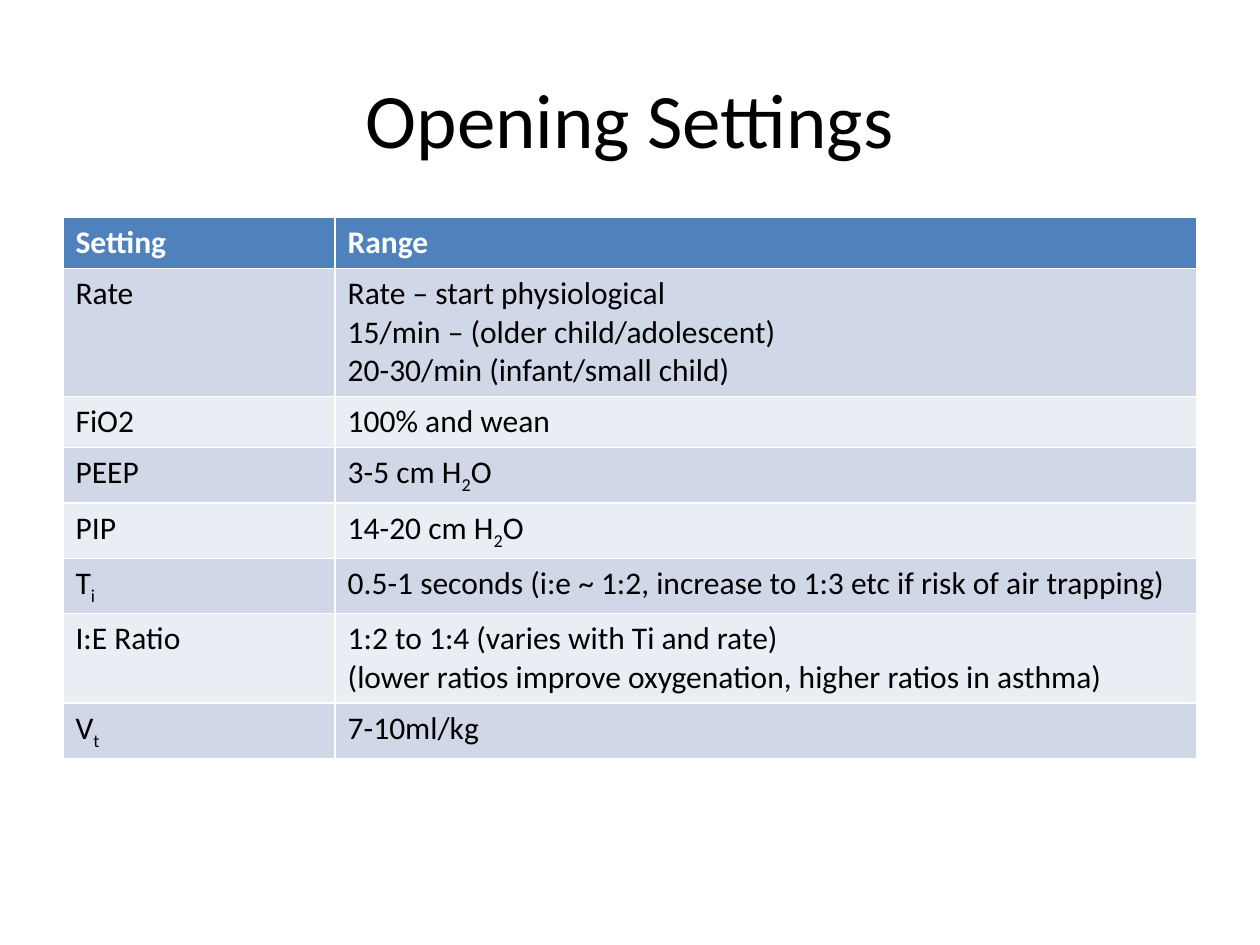
from pptx import Presentation
from pptx.dml.color import RGBColor
from pptx.enum.text import MSO_ANCHOR, PP_ALIGN
from pptx.util import Inches, Pt

BLACK = RGBColor(0x00, 0x00, 0x00)
WHITE = RGBColor(0xFF, 0xFF, 0xFF)
BLUE = RGBColor(0x4F, 0x81, 0xBD)
BANDS = (RGBColor(0xE9, 0xED, 0xF4), RGBColor(0xD0, 0xD8, 0xE8))

TITLE = {"name": "Calibri", "size": Pt(44), "bold": False}
HEAD = {"name": "Calibri", "size": Pt(18), "bold": True}
BODY = {"name": "Calibri", "size": Pt(18), "bold": False}

SETTINGS = [
    ("Setting", "Range"),
    ("Rate", "Rate – start physiological\n15/min – (older child/adolescent)\n"
             "20-30/min (infant/small child)"),
    ("FiO2", "100% and wean"),
    ("PEEP", "3-5 cm H_2_O"),
    ("PIP", "14-20 cm H_2_O"),
    ("T_i", "0.5-1 seconds (i:e ~ 1:2, increase to 1:3 etc if risk of air trapping)"),
    ("I:E Ratio", "1:2 to 1:4 (varies with Ti and rate)\n"
                  "(lower ratios improve oxygenation, higher ratios in asthma)"),
    ("V_t", "7-10ml/kg"),
]


class Deck:
    """Holds the style and the current slide; underscores in text toggle subscript."""

    def __init__(self, width, height):
        self.prs = Presentation()
        self.prs.slide_width, self.prs.slide_height = Inches(width), Inches(height)
        self.s = self.prs.slides.add_slide(self.prs.slide_layouts[5])

    def box(self, x, y, w, h):
        width, height = self.prs.slide_width, self.prs.slide_height
        return int(x * width), int(y * height), int(w * width), int(h * height)

    def text(self, tf, text, style, color):
        for i, line in enumerate(text.split("\n")):
            p = tf.add_paragraph() if i else tf.paragraphs[0]
            for j, part in enumerate(line.split("_")):
                r = p.add_run()
                r.text = part
                for key, value in style.items():
                    setattr(r.font, key, value)
                r.font.color.rgb = color
                if j % 2:
                    r._r.get_or_add_rPr().set("baseline", "-25000")

    def title(self, text, *share):
        sp = self.s.shapes.title
        sp.left, sp.top, sp.width, sp.height = self.box(*share)
        tf = sp.text_frame
        tf.vertical_anchor = MSO_ANCHOR.MIDDLE
        self.text(tf, text, TITLE, BLACK)
        tf.paragraphs[0].alignment = PP_ALIGN.CENTER

    def table(self, rows, col_shares, *share):
        x, y, w, h = self.box(*share)
        table = self.s.shapes.add_table(len(rows), len(col_shares), x, y, w, h).table
        for col, col_share in zip(table.columns, col_shares):
            col.width = int(w * col_share)
        for i, row in enumerate(rows):
            style, color, fill = (BODY, BLACK, BANDS[i % 2]) if i else (HEAD, WHITE, BLUE)
            for j, text in enumerate(row):
                cell = table.cell(i, j)
                cell.fill.solid()
                cell.fill.fore_color.rgb = fill
                self.text(cell.text_frame, text, style, color)


def main():
    deck = Deck(10, 7.5)
    deck.title("Opening Settings", 0.05, 0.04, 0.9, 0.17)
    deck.table(SETTINGS, (0.24, 0.76), 0.05, 0.23, 0.9, 0.43)
    deck.prs.save("out.pptx")


if __name__ == "__main__":
    main()
